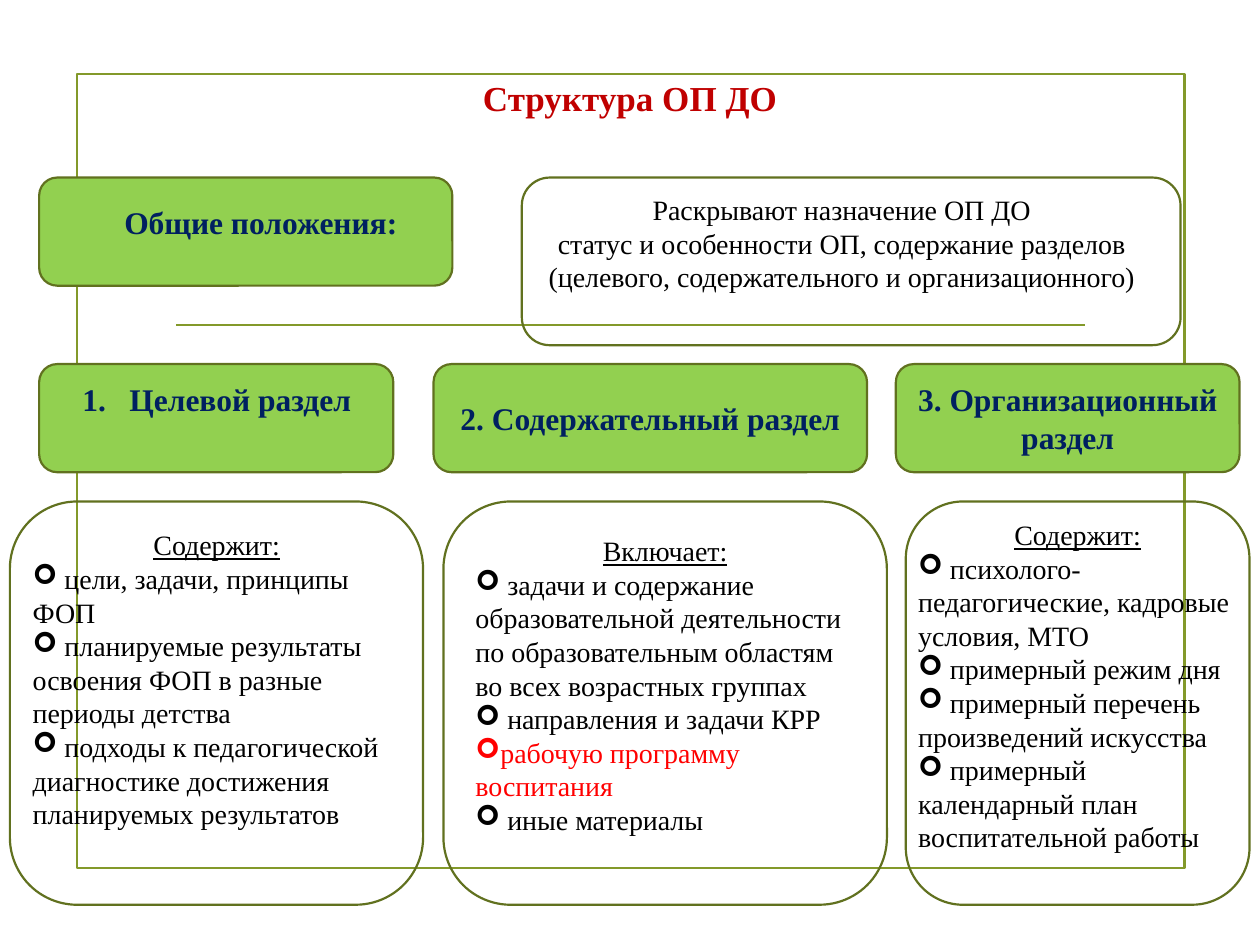
from lxml.etree import SubElement
from pptx import Presentation
from pptx.dml.color import RGBColor
from pptx.enum.shapes import MSO_CONNECTOR, MSO_SHAPE
from pptx.enum.text import MSO_ANCHOR as Anchor, MSO_AUTO_SIZE as AutoSize, PP_ALIGN as Align
from pptx.oxml.ns import qn
from pptx.util import Cm, Pt

COLORS = {"title": "C00000", "heading": "002060", "body": "000000", "accent": "FF0000",
          "card": "92D050", "outline": "61711F", "frame": "83992A"}
FORMATS = {
    "title": {"size": Pt(20), "bold": True},
    "heading": {"size": Pt(18), "bold": True},
    "body": {"size": Pt(16)},
    "lead": {"size": Pt(16), "underline": True},
    "accent": {"size": Pt(16)},
}

# A paragraph is (text, style, marker); marker is None, "arrow" or "number".
TITLE = [("Структура ОП ДО", "title", None)]
GENERAL = [("Общие положения:", "heading", None)]
PURPOSE = [
    ("Раскрывают назначение ОП ДО", "body", None),
    ("статус и особенности ОП, содержание разделов "
     "(целевого, содержательного и организационного)", "body", None),
]


def contents(lead, *items, accent=None):
    return [(lead, "lead", None)] + [
        (item, "accent" if item == accent else "body", "arrow") for item in items]


PROGRAMME = "рабочую программу воспитания"
# Areas are (left, top, width, height) in cm; a text area of None means inside the card.
SECTIONS = [
    {"left": 0.79, "width": 9.02 - 1.88, "detail_left": 0.2, "detail_width": 8.33,
     "heading": [("Целевой раздел", "heading", "number")],
     "heading_area": (0.99, 7.54, 6.76, 1.02),
     "detail": contents("Содержит:", " цели, задачи, принципы ФОП",
                        " планируемые результаты освоения ФОП в разные периоды детства",
                        " подходы к педагогической диагностике достижения "
                        "планируемых результатов"),
     "detail_area": (0.41, 10.52, 7.92, 6.4)},
    {"left": 8.74, "width": 8.74, "detail_left": 8.94, "detail_width": 8.94,
     "heading": [("2. Содержательный раздел", "heading", None)], "heading_area": None,
     "detail": contents("Включает:",
                        " задачи и содержание образовательной деятельности по "
                        "образовательным областям во всех возрастных группах",
                        " направления и задачи КРР", PROGRAMME, " иные материалы",
                        accent=PROGRAMME),
     "detail_area": None},
    {"left": 18.06, "width": 6.93, "detail_left": 18.26, "detail_width": 6.93,
     "heading": [("3. Организационный раздел", "heading", None)], "heading_area": None,
     "detail": contents("Содержит:", " психолого-педагогические, кадровые условия, МТО",
                        " примерный режим дня", " примерный перечень произведений искусства",
                        " примерный календарный план воспитательной работы"),
     "detail_area": (18.26, 10.31, 6.93, 7.87)},
]
SECTIONS[0]["width"] = 7.14

GENERAL_TOP, HEADING_TOP, DETAIL_TOP = 3.58, 7.34, 10.11
HEADING_HEIGHT, DETAIL_HEIGHT = 2.18, 8.13
DETAIL_BOTTOM_INSET = 0.86


def color(name):
    return RGBColor.from_string(COLORS[name])


def cm(area):
    return [Cm(length) for length in area]


def add_marker(paragraph, marker):
    properties = paragraph._p.get_or_add_pPr()
    indent = Cm(0.95) if marker == "number" else 0
    properties.set("marL", str(indent))
    properties.set("indent", str(-indent))
    if marker == "number":
        SubElement(properties, qn("a:buFont"), typeface="+mj-lt")
        SubElement(properties, qn("a:buAutoNum"), type="arabicPeriod")
    else:
        SubElement(properties, qn("a:buFont"), typeface="Wingdings")
        SubElement(properties, qn("a:buChar"), char="➢")


def write(frame, paragraphs):
    frame.word_wrap = True
    for index, (text, style, marker) in enumerate(paragraphs):
        paragraph = frame.paragraphs[0] if index == 0 else frame.add_paragraph()
        paragraph.alignment = Align.LEFT if marker == "arrow" else Align.CENTER
        if marker:
            add_marker(paragraph, marker)
        run = paragraph.add_run()
        run.text = text
        for name, value in {"name": "Times New Roman", **FORMATS[style]}.items():
            setattr(run.font, name, value)
        run.font.color.rgb = color("body" if style == "lead" else style)


def add_box(slide, area, fill=None, line="outline", kind=MSO_SHAPE.ROUNDED_RECTANGLE):
    box = slide.shapes.add_shape(kind, *cm(area))
    box.shadow.inherit = False
    if fill:
        box.fill.solid()
        box.fill.fore_color.rgb = color(fill)
    else:
        box.fill.background()
    box.line.color.rgb = color(line)
    box.line.width = Pt(1.25)
    return box


def add_card(slide, area, paragraphs, text_area, fill=None, bottom_inset=0.13):
    """Draw a rounded card with its text inside, or in a box of its own over it."""
    card = add_box(slide, area, fill)
    if text_area:
        frame = slide.shapes.add_textbox(*cm(text_area)).text_frame
        frame.auto_size = AutoSize.SHAPE_TO_FIT_TEXT
    else:
        frame = card.text_frame
        frame.vertical_anchor = Anchor.MIDDLE
        frame.margin_bottom = Cm(bottom_inset)
    write(frame, paragraphs)


def main():
    deck = Presentation()
    deck.slide_width, deck.slide_height = Cm(25.4), Cm(19.05)
    slide = deck.slides.add_slide(deck.slide_layouts[5])

    add_box(slide, (1.55, 1.5, 22.33, 16), line="frame", kind=MSO_SHAPE.RECTANGLE)
    divider = slide.shapes.add_connector(MSO_CONNECTOR.STRAIGHT, *cm((3.55, 6.55, 21.87, 6.55)))
    divider.line.color.rgb = color("frame")
    divider.line.width = Pt(1.25)
    SubElement(divider._element.spPr, qn("a:effectLst"))

    title = slide.shapes.title
    title.left, title.top, title.width, title.height = cm((1.27, 0.76, 22.86, 2.41))
    title.text_frame.vertical_anchor = Anchor.MIDDLE
    write(title.text_frame, TITLE)

    add_card(slide, (0.79, GENERAL_TOP, 8.33, HEADING_HEIGHT), GENERAL,
             (1.3, 3.96, 7.92, 1.02), "card")
    add_card(slide, (10.52, GENERAL_TOP, 13.28, 3.38), PURPOSE, (10.52, 3.76, 12.9, 2.31))
    for section in SECTIONS:
        add_card(slide, (section["left"], HEADING_TOP, section["width"], HEADING_HEIGHT),
                 section["heading"], section["heading_area"], "card")
        add_card(slide, (section["detail_left"], DETAIL_TOP,
                         section["detail_width"], DETAIL_HEIGHT),
                 section["detail"], section["detail_area"],
                 bottom_inset=DETAIL_BOTTOM_INSET)

    deck.save("out.pptx")


if __name__ == "__main__":
    main()
